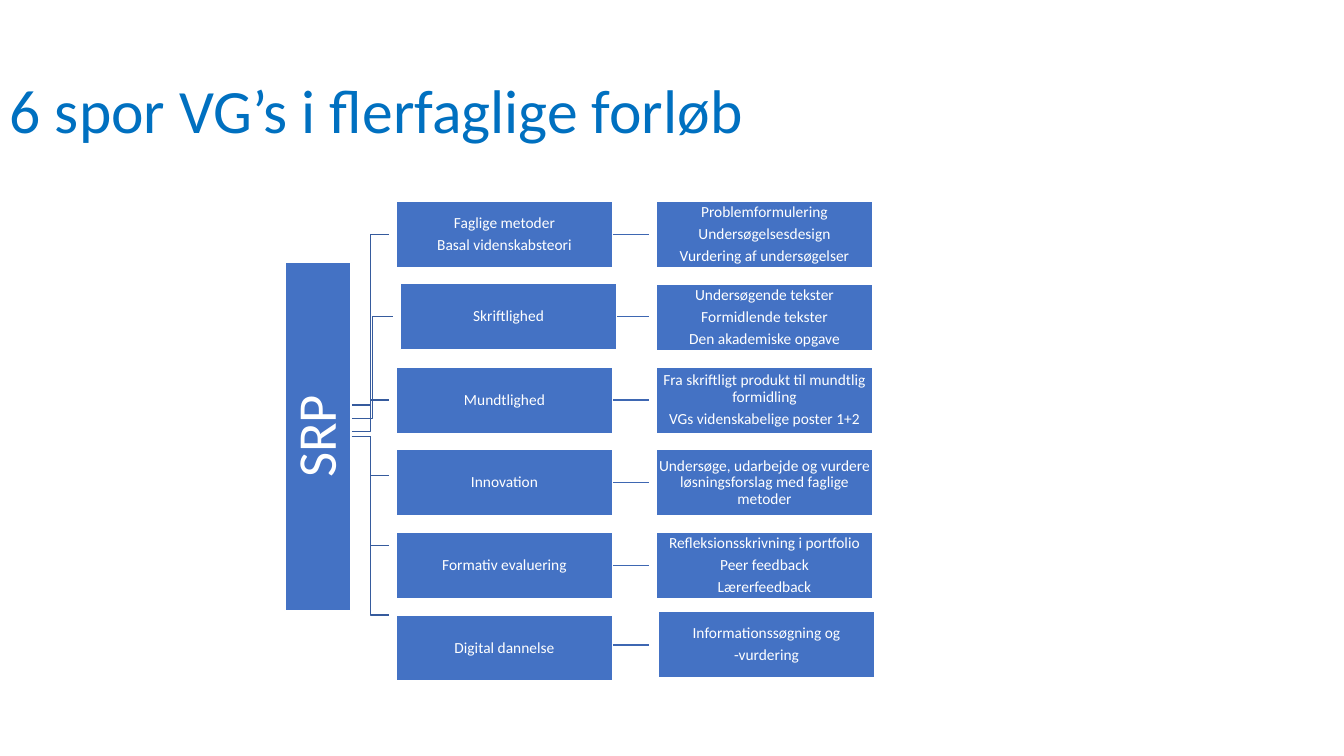
from dataclasses import dataclass

from lxml.etree import SubElement
from pptx import Presentation
from pptx.dml.color import RGBColor
from pptx.enum.shapes import MSO_CONNECTOR, MSO_SHAPE
from pptx.enum.text import MSO_ANCHOR, PP_ALIGN
from pptx.oxml.ns import qn
from pptx.shapes.autoshape import Shape
from pptx.shapes.shapetree import SlideShapes
from pptx.util import Pt

WHITE = RGBColor(0xFF, 0xFF, 0xFF)
TITLE_BLUE = RGBColor(0x00, 0x70, 0xC0)
BOX_BLUE = RGBColor(0x44, 0x72, 0xC4)
BRANCH_BLUE = RGBColor(0x36, 0x5B, 0x9D)
LINK_BLUE = RGBColor(0x3E, 0x67, 0xB2)
FONT = "Calibri"

ROW_TOP, ROW_PITCH = 144, 59.04
BOX_WIDTH, BOX_HEIGHT = 154.8, 47.4
TRACK_LEFT, DETAIL_LEFT = 282.96, 468.72
BRANCH_START = 251.3
BRANCH_GAP, LINK_GAP = 5.1, 5.0


@dataclass(frozen=True)
class Track:
    name: tuple[str, ...]
    details: tuple[str, ...]
    branch_from: float
    branch_to: float
    name_shift: tuple[float, float] = (0, 0)
    detail_shift: tuple[float, float] = (0, 0)
    link_y: float | None = None


TRACKS = (
    Track(("Faglige metoder", "Basal videnskabsteori"),
          ("Problemformulering", "Undersøgelsesdesign", "Vurdering af undersøgelser"),
          289.4, 167.7),
    Track(("Skriftlighed",),
          ("Undersøgende tekster", "Formidlende tekster", "Den akademiske opgave"),
          298.8, 226.1, name_shift=(2.9, -0.7)),
    Track(("Mundtlighed",),
          ("Fra skriftligt produkt til mundtlig formidling", "VGs videnskabelige poster 1+2"),
          308.2, 285.8),
    Track(("Innovation",),
          ("Undersøge, udarbejde og vurdere løsningsforslag med faglige metoder",),
          311.8, 339.8),
    Track(("Formativ evaluering",),
          ("Refleksionsskrivning i portfolio", "Peer feedback", "Lærerfeedback"),
          311.8, 389.5),
    Track(("Digital dannelse",),
          ("Informationssøgning og", "-vurdering"),
          311.8, 439.2, detail_shift=(1.4, -2.2), link_y=460.8),
)


def add_title(shapes: SlideShapes, text: str) -> None:
    title = shapes.add_textbox(Pt(0), Pt(28.8), Pt(828), Pt(104.4))
    frame = title.text_frame
    frame.word_wrap = True
    frame.vertical_anchor = MSO_ANCHOR.MIDDLE
    paragraph = frame.paragraphs[0]
    paragraph.text = text
    paragraph.line_spacing = 0.9
    paragraph.font.name = FONT
    paragraph.font.size = Pt(44)
    paragraph.font.color.rgb = TITLE_BLUE


def add_box(shapes: SlideShapes, left: float, top: float, width: float,
            lines: tuple[str, ...], size: float = 11, inset: float = 0.7) -> Shape:
    box = shapes.add_shape(MSO_SHAPE.RECTANGLE, Pt(left), Pt(top), Pt(width), Pt(BOX_HEIGHT))
    box.shadow.inherit = False
    box.fill.solid()
    box.fill.fore_color.rgb = BOX_BLUE
    box.line.color.rgb = WHITE
    box.line.width = Pt(1)
    frame = box.text_frame
    frame.word_wrap = True
    frame.vertical_anchor = MSO_ANCHOR.MIDDLE
    frame.margin_left = frame.margin_right = Pt(inset)
    frame.margin_top = frame.margin_bottom = Pt(inset)
    frame.text = "\n".join(lines)
    for paragraph in frame.paragraphs:
        paragraph.alignment = PP_ALIGN.CENTER
        paragraph.line_spacing = 0.9
        paragraph.space_after = Pt(0.35 * size)
        paragraph.font.name = FONT
        paragraph.font.size = Pt(size)
        paragraph.font.color.rgb = WHITE
    return box


def add_branch(shapes: SlideShapes, track: Track) -> None:
    end = TRACK_LEFT + track.name_shift[0] - BRANCH_GAP
    bend = (BRANCH_START + end) / 2
    builder = shapes.build_freeform(Pt(BRANCH_START), Pt(track.branch_from))
    builder.add_line_segments(
        [(Pt(bend), Pt(track.branch_from)), (Pt(bend), Pt(track.branch_to)),
         (Pt(end), Pt(track.branch_to))], close=False)
    branch = builder.convert_to_shape()
    branch.shadow.inherit = False
    branch.fill.background()
    branch.line.color.rgb = BRANCH_BLUE
    branch.line.width = Pt(1)


def add_link(shapes: SlideShapes, track: Track, name_box: Shape) -> None:
    start = name_box.left + name_box.width
    middle = name_box.top + name_box.height // 2
    y = middle if track.link_y is None else Pt(track.link_y)
    link = shapes.add_connector(MSO_CONNECTOR.STRAIGHT, start, y, Pt(DETAIL_LEFT - LINK_GAP), y)
    if y == middle:
        link.begin_connect(name_box, 3)
    link.line.color.rgb = LINK_BLUE
    link.line.width = Pt(1)
    SubElement(link._element.spPr, qn("a:effectLst"))


def add_track(shapes: SlideShapes, row: int, track: Track) -> None:
    top = ROW_TOP + row * ROW_PITCH
    name_dx, name_dy = track.name_shift
    detail_dx, detail_dy = track.detail_shift
    add_branch(shapes, track)
    name_box = add_box(shapes, TRACK_LEFT + name_dx, top + name_dy, BOX_WIDTH, track.name)
    add_box(shapes, DETAIL_LEFT + detail_dx, top + detail_dy, BOX_WIDTH, track.details)
    add_link(shapes, track, name_box)


def main() -> None:
    deck = Presentation()
    deck.slide_width, deck.slide_height = Pt(960), Pt(540)
    shapes = deck.slides.add_slide(deck.slide_layouts[6]).shapes
    add_title(shapes, "6 spor VG’s i flerfaglige forløb")
    project = add_box(shapes, 103, 288, 248.4, ("SRP",), size=39, inset=2)
    project.rotation = 270
    for row, track in enumerate(TRACKS):
        add_track(shapes, row, track)
    deck.save("out.pptx")


if __name__ == "__main__":
    main()
